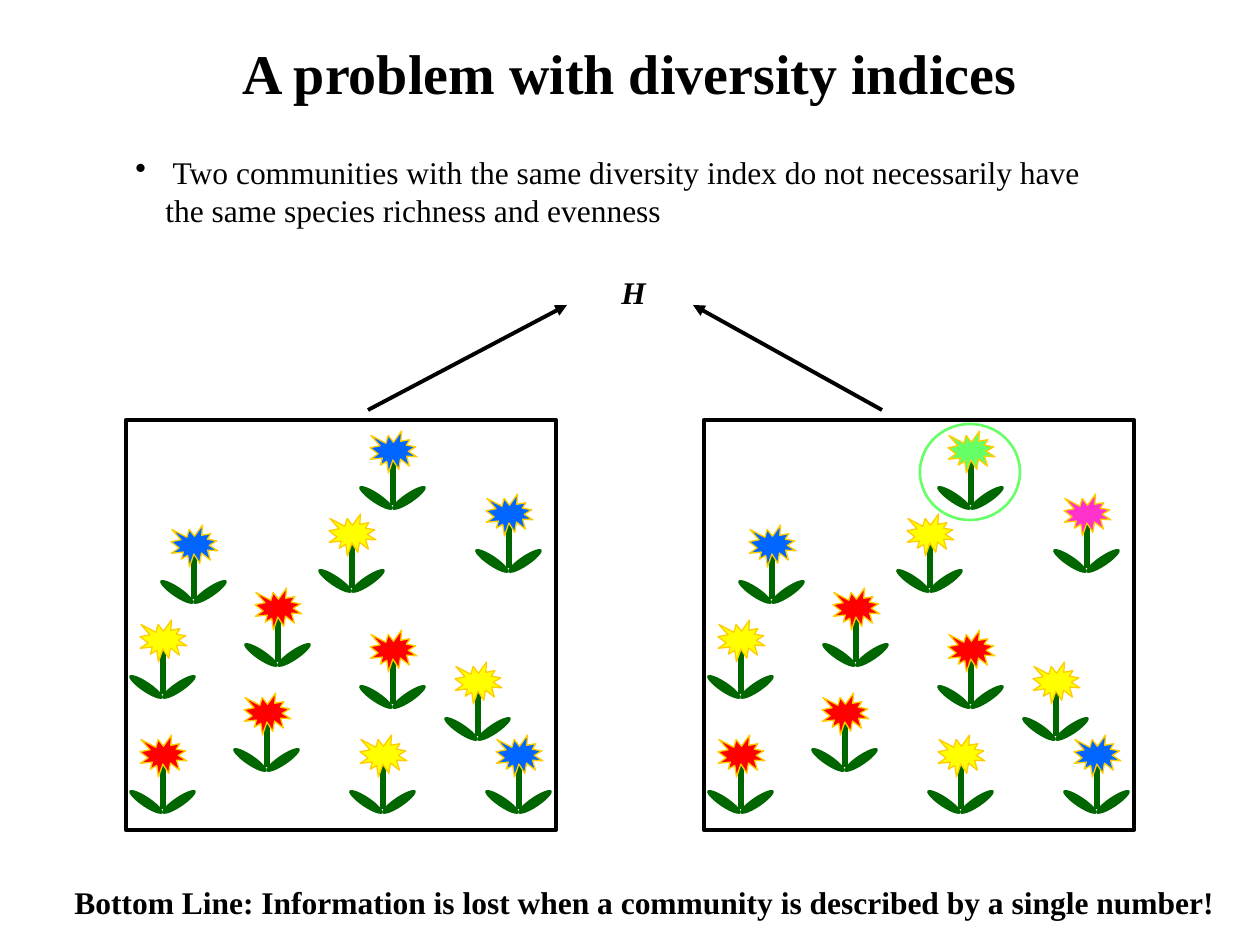
import lxml.etree
import pptx
import pptx.dml.color
import pptx.enum.shapes
import pptx.enum.text
import pptx.oxml.ns
import pptx.shapes.connector
import pptx.util

PX = 914400 / 126
COLORS = {
    "black": "000000",
    "leaf": "006600",
    "petal edge": "FFCC00",
    "blue": "0066FF",
    "red": "FF0000",
    "yellow": "FFFF00",
    "green": "66FF66",
    "pink": "FF33CC",
}
SHAPES = pptx.enum.shapes.MSO_SHAPE
STRAIGHT = pptx.enum.shapes.MSO_CONNECTOR.STRAIGHT
ALIGN = pptx.enum.text.PP_ALIGN
qn = pptx.oxml.ns.qn

deck = pptx.Presentation()
deck.slide_width = pptx.util.Inches(10)
deck.slide_height = pptx.util.Inches(7.5)
slide = deck.slides.add_slide(deck.slide_layouts[6])


def add_text(text, box, size=18, bold=False, italic=False, align=ALIGN.LEFT, wrap=True, bullet_indent=0):
    frame = slide.shapes.add_textbox(*[round(v * PX) for v in box]).text_frame
    frame.word_wrap = wrap
    frame.auto_size = pptx.enum.text.MSO_AUTO_SIZE.SHAPE_TO_FIT_TEXT
    paragraph = frame.paragraphs[0]
    paragraph.alignment = align
    run = paragraph.add_run()
    run.text = text
    run.font.name = "Times New Roman"
    run.font.size = pptx.util.Pt(size)
    run.font.bold = bold
    run.font.italic = italic
    run.font.color.rgb = pptx.dml.color.RGBColor.from_string(COLORS["black"])
    if bullet_indent:
        properties = paragraph._p.get_or_add_pPr()
        properties.set("marL", str(round(bullet_indent * PX)))
        properties.set("indent", str(round(-bullet_indent * PX)))
        lxml.etree.SubElement(properties, qn("a:buChar")).set("char", "•")


def paint(item, line=None, width=0, fill=None):
    if line:
        item.line.color.rgb = pptx.dml.color.RGBColor.from_string(COLORS[line])
        item.line.width = pptx.util.Pt(width)
    else:
        item.line.fill.background()
    if isinstance(item, pptx.shapes.connector.Connector):
        lxml.etree.SubElement(item._element.spPr, qn("a:effectLst"))
        return
    item.shadow.inherit = False
    if fill:
        item.fill.solid()
        item.fill.fore_color.rgb = pptx.dml.color.RGBColor.from_string(COLORS[fill])
    else:
        item.fill.background()


add_text("A problem with diversity indices", (0, 32, 1260, 79), size=32, bold=True, align=ALIGN.CENTER)
add_text(
    " Two communities with the same diversity index do not necessarily have the same species richness and evenness",
    (123, 147, 999, 88),
    bullet_indent=30,
)

flowers = [
    (45, 105, "blue", "blue"),
    (118, 273, "red", "red"),
    (203, 94, "yellow", "yellow"),
    (234, 315, "yellow", "yellow"),
    (329, 242, "yellow", "yellow"),
    (370, 315, "blue", "blue"),
    (244, 11, "blue", "green"),
    (14, 315, "red", "red"),
    (244, 210, "red", "red"),
    (14, 200, "yellow", "yellow"),
    (360, 74, "blue", "pink"),
    (129, 168, "red", "red"),
]
plot_top = 420
for community, plot_left in enumerate((126, 704)):
    plot = slide.shapes.add_shape(
        SHAPES.RECTANGLE, *[round(v * PX) for v in (plot_left, plot_top, 430, 410)]
    )
    paint(plot, line="black", width=2.5)
    for across, down, *species in flowers:
        left, top = plot_left + across, plot_top + down
        flower = slide.shapes.add_group_shape().shapes
        for leaf_offset, angle in ((1, 304), (34, 56)):
            leaf = flower.add_shape(
                SHAPES.OVAL, *[round(v * PX) for v in (left + leaf_offset, top + 47, 10, 40)]
            )
            leaf.rotation = angle
            paint(leaf, fill="leaf")
        stem_x = left + 23
        stem = flower.add_connector(
            STRAIGHT, *[round(v * PX) for v in (stem_x, top + 27, stem_x, top + 74)]
        )
        paint(stem, line="leaf", width=3)
        blossom = flower.add_shape(
            SHAPES.EXPLOSION1, *[round(v * PX) for v in (left, top, 47, 42)]
        )
        paint(blossom, line="petal edge", width=0.75, fill=species[community])

add_text("H", (609, 267, 50, 50), bold=True, italic=True, wrap=False)
for start_x, end_x in ((368, 567), (882, 693)):
    arrow = slide.shapes.add_connector(
        STRAIGHT, *[round(v * PX) for v in (start_x, 410, end_x, 305)]
    )
    paint(arrow, line="black", width=2.25)
    lxml.etree.SubElement(arrow.line._get_or_add_ln(), qn("a:tailEnd")).set("type", "triangle")

add_text(
    "Bottom Line: Information is lost when a community is described by a single number!",
    (62, 877, 1177, 50),
    bold=True,
    wrap=False,
)
rare_species_ring = slide.shapes.add_shape(
    SHAPES.OVAL, *[round(v * PX) for v in (920, 424, 100, 96)]
)
paint(rare_species_ring, line="green", width=1.5)

deck.save("out.pptx")
